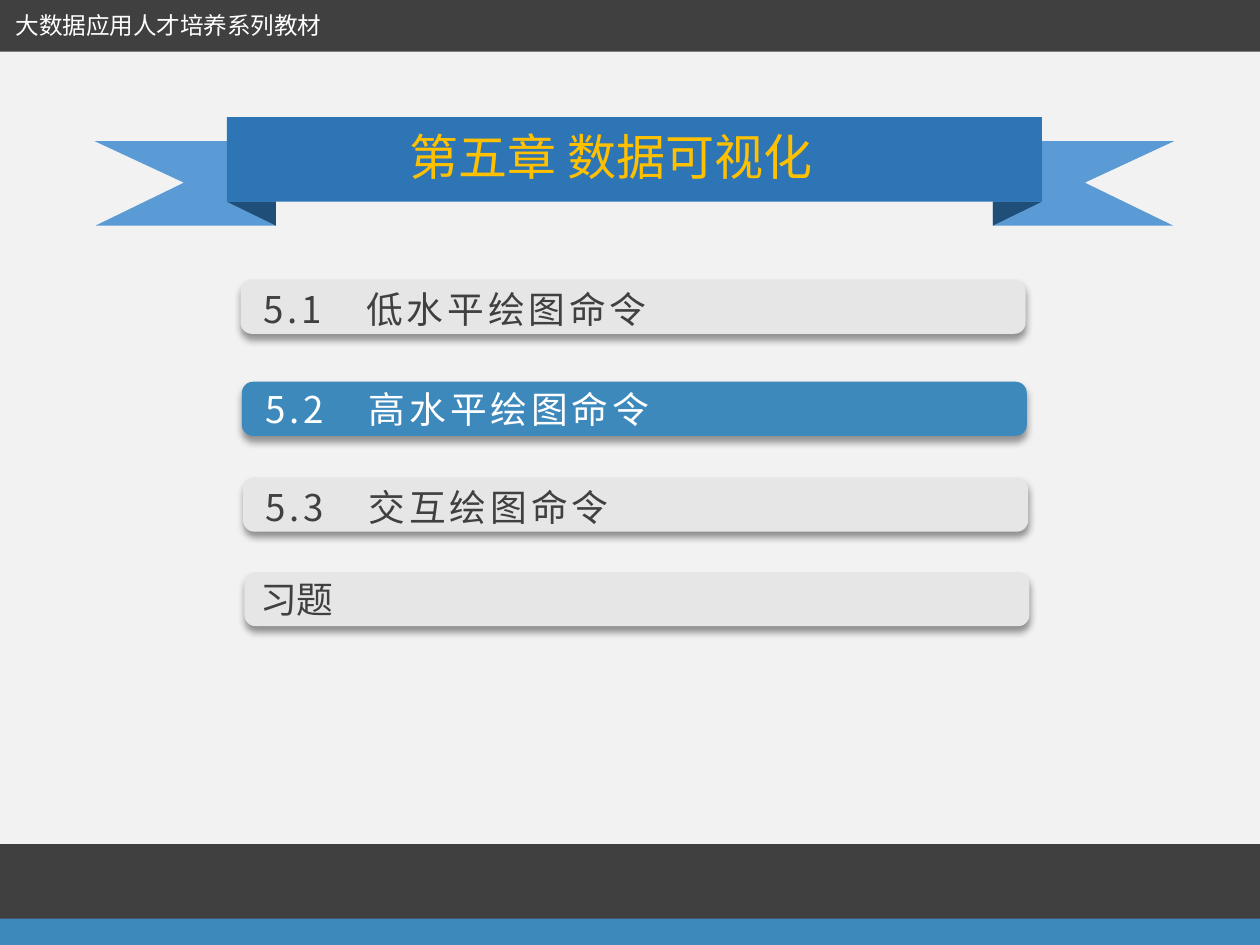
from pptx import Presentation
from pptx import util as u
from pptx.dml.color import RGBColor
from pptx.enum import shapes, text
from pptx.oxml import parse_xml
from pptx.oxml.ns import nsdecls, qn

Inches = u.Inches
SHAPE = shapes.MSO_SHAPE
ALIGN = text.PP_ALIGN

PAGE = RGBColor(0xF2, 0xF2, 0xF2)
DARK = RGBColor(0x40, 0x40, 0x40)
ACCENT = RGBColor(0x3D, 0x89, 0xBC)
PALE = RGBColor(0xE6, 0xE6, 0xE6)
WHITE = RGBColor(0xFF, 0xFF, 0xFF)
GOLD = RGBColor(0xFF, 0xC0, 0x00)
RIBBON = RGBColor(0x2E, 0x75, 0xB6)
RIBBON_TAIL = RGBColor(0x5B, 0x9B, 0xD5)
RIBBON_FOLD = RGBColor(0x1F, 0x4E, 0x79)

RIBBON_WIDTH_SUM = 10.07  # left and right x of mirrored ribbon points add up to this
TAIL = [(0.75, 1.12), (2.19, 1.12), (2.19, 1.79), (0.76, 1.79), (1.46, 1.45)]
BAR_W, BAR_H = 6.23, 0.43

# bar left, bar top, label left, label top, label width, label, highlighted
SECTIONS = [
    (1.91, 2.22, 1.99, 2.23, 3.32, "5.1　低水平绘图命令", False),
    (1.92, 3.03, 2.01, 3.02, 3.32, "5.2　高水平绘图命令", True),
    (1.93, 3.79, 2.01, 3.80, 3.00, "5.3　交互绘图命令", False),
]


class Deck:
    font = "Noto Sans CJK SC"

    def __init__(self):
        self.prs = Presentation()
        self.prs.slide_width, self.prs.slide_height = Inches(10), Inches(7.5)
        self.s = self.prs.slides.add_slide(self.prs.slide_layouts[5])
        fill = self.s.background.fill
        fill.solid()
        fill.fore_color.rgb = PAGE

    def paint(self, sp, color):
        sp.shadow.inherit = False
        sp.fill.solid()
        sp.fill.fore_color.rgb = color
        sp.line.fill.background()
        return sp

    def shape(self, kind, box, color):
        sp = self.s.shapes.add_shape(kind, *map(Inches, box))
        return self.paint(sp, color)

    def outline(self, points, color):
        points = [(Inches(x), Inches(y)) for x, y in points]
        fb = self.s.shapes.build_freeform(*points[0])
        fb.add_line_segments(points[1:], close=True)
        return self.paint(fb.convert_to_shape(), color)

    def fold(self, left, rotation, flips):
        """Shaded corner where the ribbon turns behind its front."""
        sp = self.shape(SHAPE.RIGHT_TRIANGLE, (left, 1.5, 0.19, 0.39), RIBBON_FOLD)
        sp.rotation = rotation
        for flip in flips:
            sp._element.spPr.xfrm.set(flip, "1")

    def bar(self, left, top, color):
        """Rounded bar with a soft shadow below."""
        sp = self.shape(SHAPE.ROUNDED_RECTANGLE, (left, top, BAR_W, BAR_H), color)
        sp.adjustments[0] = 0.207
        sp._element.spPr.find(qn("a:effectLst")).append(parse_xml(
            f'<a:outerShdw {nsdecls("a")} blurRad="{u.Pt(4)}" dist="{u.Pt(3)}"'
            ' dir="5400000" algn="t" rotWithShape="0"><a:srgbClr val="000000">'
            '<a:alpha val="40000"/></a:srgbClr></a:outerShdw>'))
        return sp

    def put_text(self, sp, words, size, color, align=ALIGN.LEFT, spacing=0):
        p = sp.text_frame.paragraphs[0]
        p.alignment = align
        r = p.add_run()
        r.text = words
        for name, value in {"name": self.font, "size": u.Pt(size)}.items():
            setattr(r.font, name, value)
        r.font.color.rgb = color
        rPr = r._r.get_or_add_rPr()
        rPr.find(qn("a:latin")).addnext(
            parse_xml(f'<a:ea {nsdecls("a")} typeface="{self.font}"/>'))
        if spacing:
            rPr.set("spc", str(round(spacing * 100)))

    def fit(self, sp):
        frame = {"word_wrap": False, "vertical_anchor": text.MSO_ANCHOR.TOP,
                 "auto_size": text.MSO_AUTO_SIZE.SHAPE_TO_FIT_TEXT}
        for name, value in frame.items():
            setattr(sp.text_frame, name, value)

    def label(self, box, *args, **kwargs):
        sp = self.s.shapes.add_textbox(*map(Inches, box))
        self.fit(sp)
        self.put_text(sp, *args, **kwargs)

    def title(self, box, words, size, color):
        sp = self.s.shapes.title
        for name, value in zip(("left", "top", "width", "height"), box):
            setattr(sp, name, Inches(value))
        self.fit(sp)
        self.put_text(sp, words, size, color, ALIGN.CENTER)
        self.s.shapes._spTree.append(sp._element)  # in front of the ribbon


def main():
    deck = Deck()

    deck.outline(TAIL, RIBBON_TAIL)
    deck.outline([(RIBBON_WIDTH_SUM - x, y) for x, y in TAIL], RIBBON_TAIL)
    deck.fold(1.9, 90, ["flipV"])
    deck.fold(7.98, 270, ["flipH", "flipV"])
    deck.shape(SHAPE.RECTANGLE, (1.8, 0.93, 6.47, 0.67), RIBBON)
    deck.title((3.12, 0.95, 3.46, 0.57), "第五章 数据可视化", 28, GOLD)

    for left, top, text_left, text_top, width, words, active in SECTIONS:
        deck.bar(left, top, ACCENT if active else PALE)
        deck.label((text_left, text_top, width, 0.45), words, 21,
                   WHITE if active else DARK, spacing=2.2)
    exercises = deck.bar(1.94, 4.54, PALE)
    deck.put_text(exercises, "习题", 21, DARK)

    deck.shape(SHAPE.RECTANGLE, (-0.01, -0.01, 10.02, 0.42), DARK)
    deck.shape(SHAPE.RECTANGLE, (0, 6.7, 10, 0.6), DARK)
    deck.shape(SHAPE.RECTANGLE, (0, 7.29, 10, 0.21), ACCENT)
    deck.label((0.01, 0.04, 2.66, 0.33), "大数据应用人才培养系列教材", 13.5,
               WHITE, ALIGN.CENTER)

    deck.prs.save("out.pptx")


if __name__ == "__main__":
    main()
